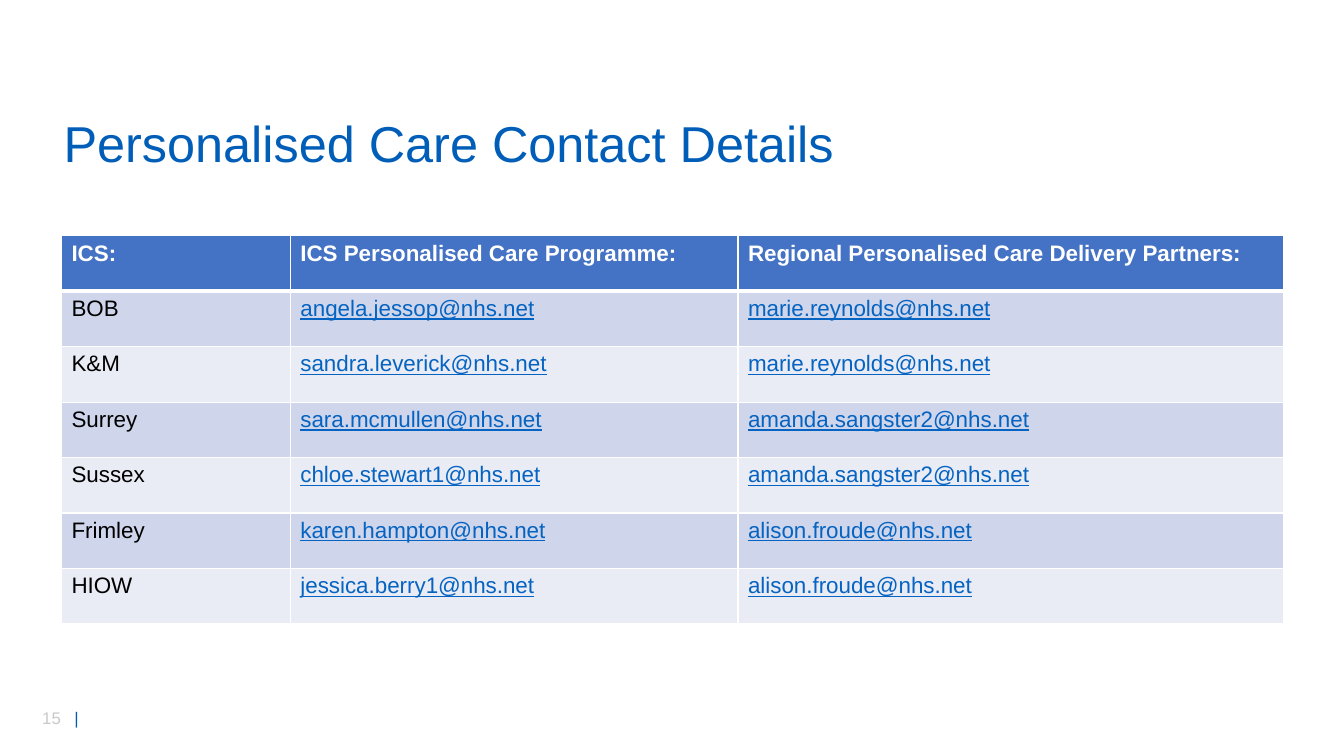
from lxml import etree
from pptx import Presentation
from pptx.dml.color import RGBColor
from pptx.enum import text
from pptx.oxml import ns
from pptx.util import Inches, Pt

COLORS = {
    "blue": "005EB8", "grey": "C9C9C9", "header": "4472C4", "white": "FFFFFF",
    "black": "000000", "link": "0563C1", "odd": "CFD5EA", "even": "E9EBF5",
}
HEADERS = ["ICS:", "ICS Personalised Care Programme:",
           "Regional Personalised Care Delivery Partners:"]
CONTACTS = [
    ("BOB", "angela.jessop@nhs.net", "marie.reynolds@nhs.net"),
    ("K&M", "sandra.leverick@nhs.net", "marie.reynolds@nhs.net"),
    ("Surrey", "sara.mcmullen@nhs.net", "amanda.sangster2@nhs.net"),
    ("Sussex", "chloe.stewart1@nhs.net", "amanda.sangster2@nhs.net"),
    ("Frimley", "karen.hampton@nhs.net", "alison.froude@nhs.net"),
    ("HIOW", "jessica.berry1@nhs.net", "alison.froude@nhs.net"),
]
COL_WIDTHS = [2.27, 4.44, 5.41]


def add_run(p, content, size=16, color="black", bold=False, underline=False):
    """Add one formatted run to a paragraph."""
    r = p.add_run()
    r.text = content
    r.font.name = "Arial"
    r.font.size = Pt(size)
    r.font.bold = bold
    r.font.underline = underline
    r.font.color.rgb = RGBColor.from_string(COLORS[color])


def set_borders(cell, bottom):
    """Draw white cell borders with the given bottom width in points."""
    tc_pr = cell._tc.get_or_add_tcPr()
    for side, width in (("L", 1), ("R", 1), ("T", 1), ("B", bottom)):
        ln = etree.SubElement(tc_pr, ns.qn(f"a:ln{side}"), w=str(Pt(width)))
        fill = etree.SubElement(ln, ns.qn("a:solidFill"))
        etree.SubElement(fill, ns.qn("a:srgbClr"), val=COLORS["white"])


def add_title(s, left, top, width, height):
    """Place and format the slide title."""
    sp = s.shapes.title
    sp.left, sp.top, sp.width, sp.height = map(Inches, (left, top, width, height))
    tf = sp.text_frame
    tf.word_wrap = True
    tf.vertical_anchor = text.MSO_ANCHOR.MIDDLE
    p = tf.paragraphs[0]
    p.alignment = text.PP_ALIGN.LEFT
    p.line_spacing = 0.9
    add_run(p, "Personalised Care Contact Details", size=36, color="blue")


def add_contacts(s, left, top, width, height):
    """Build the contact table in the given box."""
    rows = [HEADERS, *CONTACTS]
    table = s.shapes.add_table(len(rows), len(HEADERS), *map(
        Inches, (left, top, width, height))).table
    for column, share in zip(table.columns, COL_WIDTHS):
        column.width = Inches(width * share / sum(COL_WIDTHS))
    for i, row in enumerate(rows):
        header = i == 0
        fill = "header" if header else "odd" if i % 2 else "even"
        for j, content in enumerate(row):
            cell = table.cell(i, j)
            set_borders(cell, 3 if header else 1)
            cell.fill.solid()
            cell.fill.fore_color.rgb = RGBColor.from_string(COLORS[fill])
            link = not header and j > 0
            color = "white" if header else "link" if link else "black"
            add_run(cell.text_frame.paragraphs[0], content, color=color,
                    bold=header, underline=link)


def add_page_number(s, left, top, width, height):
    """Place the page number and its divider bar."""
    tf = s.shapes.add_textbox(*map(Inches, (left, top, width, height))).text_frame
    tf.word_wrap = True
    p = tf.paragraphs[0]
    tabs = etree.SubElement(p._p.get_or_add_pPr(), ns.qn("a:tabLst"))
    etree.SubElement(tabs, ns.qn("a:tab"), pos=str(Inches(0.32)), algn="l")
    add_run(p, "15\t", size=12, color="grey")
    add_run(p, "|", size=12, color="blue")


def main():
    """Build and save the slide."""
    prs = Presentation()
    prs.slide_width, prs.slide_height = Inches(13.33), Inches(7.5)
    s = prs.slides.add_slide(prs.slide_layouts.get_by_name("Title Only"))
    add_page_number(s, 0.32, 6.97, 0.71, 0.3)
    add_title(s, 0.53, 1.12, 11.64, 0.67)
    add_contacts(s, 0.61, 2.34, 12.12, 3.85)
    prs.save("out.pptx")


if __name__ == "__main__":
    main()
